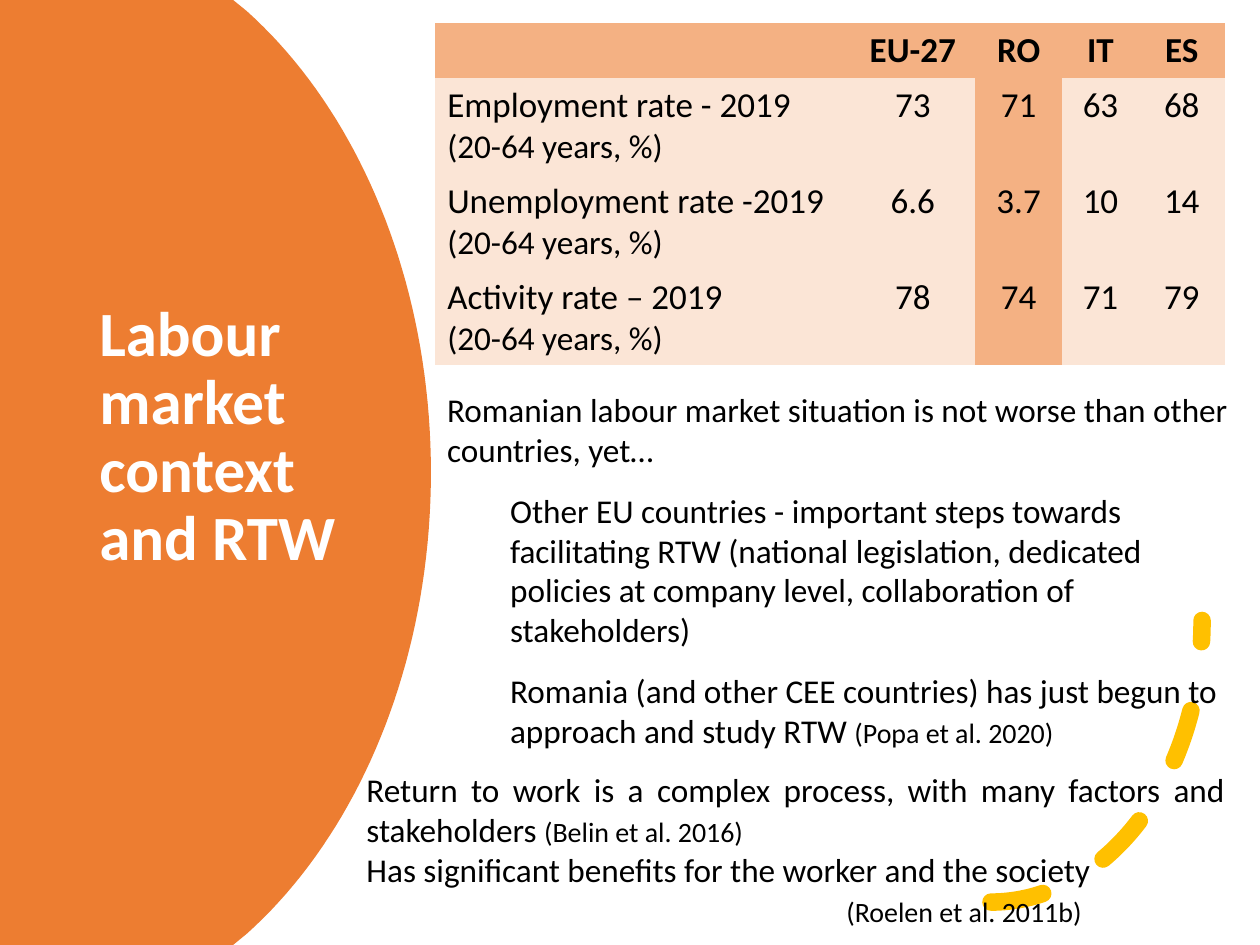
from lxml import etree
from pptx import Presentation
from pptx import util as u
from pptx.dml.color import RGBColor
from pptx.enum import dml, shapes, text
from pptx.oxml.ns import qn

WIDTH, HEIGHT = 10, 7.5
FONT = "Calibri"
ORANGE = RGBColor(0xED, 0x7D, 0x31)
PEACH = RGBColor(0xF4, 0xB1, 0x83)
PALE = RGBColor(0xFB, 0xE5, 0xD6)
GOLD = RGBColor(0xFF, 0xC0, 0x00)
BLACK = RGBColor(0, 0, 0)
WHITE = RGBColor(0xFF, 0xFF, 0xFF)
BODY, CITATION = 19, 16
NO_TABLE_STYLE = "{2D5ABB26-0587-4C30-8999-92F81FD0307C}"

COLUMNS = (3.3, 0.99, 0.69, 0.61, 0.68)
HEADER_HEIGHT, ROW_HEIGHT = 0.44, 0.76
HEADINGS = ("", "EU-27", "RO", "IT", "ES")
AGES = "(20-64 years, %)"
RATES = (
    ("Employment rate - 2019", "73", "71", "63", "68"),
    ("Unemployment rate -2019", "6.6", "3.7", "10", "14"),
    ("Activity rate – 2019", "78", "74", "71", "79"),
)
HIGHLIGHT = HEADINGS.index("RO")


def style_font(font, size, color=BLACK, bold=False):
    font.name, font.size, font.bold = FONT, u.Pt(size), bold
    font.color.rgb = color


def bezier(points, t):
    """Point at share t of a cubic curve."""
    weights = ((1 - t) ** 3, 3 * t * (1 - t) ** 2, 3 * t * t * (1 - t), t ** 3)
    return tuple(sum(w * p[axis] for w, p in zip(weights, points)) for axis in (0, 1))


def add_side_panel(slide):
    curve = ((1.96, 0.09), (2.84, 0.88), (3.42, 2.23), (3.42, HEIGHT / 2))
    steps = 40
    upper = [(1.85, 0)] + [bezier(curve, i / steps) for i in range(steps + 1)]
    lower = [(x, HEIGHT - y) for x, y in reversed(upper[:-1])]
    outline = upper + lower + [(0, HEIGHT)]
    # The builder keeps whole units only, so points are given in EMU
    builder = slide.shapes.build_freeform(0, 0)
    builder.add_line_segments([(u.Inches(x), u.Inches(y)) for x, y in outline], close=True)
    panel = builder.convert_to_shape()
    panel.shadow.inherit = False
    panel.fill.solid()
    panel.fill.fore_color.rgb = ORANGE
    panel.line.fill.background()


def add_dashed_arc(slide, left, top, width, height):
    arc = slide.shapes.add_shape(shapes.MSO_SHAPE.ARC, *map(u.Inches, (left, top, width, height)))
    arc.shadow.inherit = False
    arc.fill.background()
    arc.line.color.rgb = GOLD
    arc.line.width = u.Pt(10)
    arc.line.dash_style = dml.MSO_LINE.DASH
    arc.line._ln.set("cap", "rnd")
    arc._element.spPr.find(qn("a:xfrm")).set("flipV", "1")


def add_text_box(slide, left, top, width, height, anchor=text.MSO_ANCHOR.TOP):
    box = slide.shapes.add_textbox(*map(u.Inches, (left, top, width, height)))
    box.text_frame.word_wrap = True
    box.text_frame.vertical_anchor = anchor
    return box.text_frame


def add_paragraph(frame, wording, citation="", indent=0, before=0, align=text.PP_ALIGN.LEFT):
    """Body wording, then a source in smaller type."""
    first = frame.paragraphs[0]
    paragraph = frame.add_paragraph() if first.runs else first
    paragraph.alignment = align
    paragraph.space_before = u.Pt(before)
    if indent:
        properties = paragraph._p.get_or_add_pPr()
        properties.set("marL", str(u.Inches(indent)))
        properties.set("indent", "0")
    for words, size in ((wording, BODY), (citation, CITATION)):
        if words:
            run = paragraph.add_run()
            run.text = words
            style_font(run.font, size)


def fill_cell(cell, lines, color, align, bold=False):
    cell.fill.solid()
    cell.fill.fore_color.rgb = color
    cell.text_frame.text = "\n".join(lines)
    for paragraph, size in zip(cell.text_frame.paragraphs, (20, BODY)):
        paragraph.alignment = align
        style_font(paragraph.font, size, bold=bold)


def add_rate_table(slide, left, top):
    rows = (HEADINGS,) + RATES
    height = HEADER_HEIGHT + ROW_HEIGHT * len(RATES)
    frame = slide.shapes.add_table(len(rows), len(COLUMNS),
                                   *map(u.Inches, (left, top, sum(COLUMNS), height)))
    table = frame.table
    table.horz_banding = table.first_row = False
    properties = table._tbl.tblPr
    style = properties.find(qn("a:tableStyleId"))
    if style is None:
        style = etree.SubElement(properties, qn("a:tableStyleId"))
    style.text = NO_TABLE_STYLE
    for column, width in zip(table.columns, COLUMNS):
        column.width = u.Inches(width)
    for r, values in enumerate(rows):
        header = r == 0
        table.rows[r].height = u.Inches(HEADER_HEIGHT if header else ROW_HEIGHT)
        for c, value in enumerate(values):
            label = c == 0
            lines = (value, AGES) if label and not header else (value,)
            fill_cell(table.cell(r, c), lines,
                      PEACH if header or c == HIGHLIGHT else PALE,
                      text.PP_ALIGN.LEFT if label else text.PP_ALIGN.CENTER, bold=header)


def main():
    presentation = Presentation()
    presentation.slide_width, presentation.slide_height = u.Inches(WIDTH), u.Inches(HEIGHT)
    slide = presentation.slides.add_slide(presentation.slide_layouts[6])

    # Side panel with the title
    add_side_panel(slide)
    title = add_text_box(slide, 0.69, 1.04, 2.5, 4.88, text.MSO_ANCHOR.MIDDLE).paragraphs[0]
    title.text = "Labour market context and RTW"
    title.line_spacing = 0.9
    style_font(title.font, 36, WHITE, bold=True)

    # Decoration and rates
    add_dashed_arc(slide, 6.19, 2.69, 3.35, 4.47)
    add_rate_table(slide, 3.45, 0.18)

    # Comparison of countries
    comparison = add_text_box(slide, 3.45, 3.04, 6.48, 3)
    add_paragraph(comparison, "Romanian labour market situation is not worse than other countries, yet…")
    add_paragraph(comparison, "Other EU countries - important steps towards facilitating RTW "
                  "(national legislation, dedicated policies at company level, "
                  "collaboration of stakeholders)", indent=0.5, before=12)
    add_paragraph(comparison, "Romania (and other CEE countries) has just begun to approach "
                  "and study RTW ", "(Popa et al. 2020)", indent=0.5, before=12)

    # Conclusions
    conclusions = add_text_box(slide, 2.81, 6.06, 7.01, 1.38)
    add_paragraph(conclusions, "Return to work is a complex process, with many factors and stakeholders ",
                  "(Belin et al. 2016)", align=text.PP_ALIGN.JUSTIFY)
    add_paragraph(conclusions, "Has significant benefits for the worker and the society",
                  align=text.PP_ALIGN.JUSTIFY)
    add_paragraph(conclusions, "", "(Roelen et al. 2011b)", indent=3.81, before=3)

    presentation.save("out.pptx")


if __name__ == "__main__":
    main()
